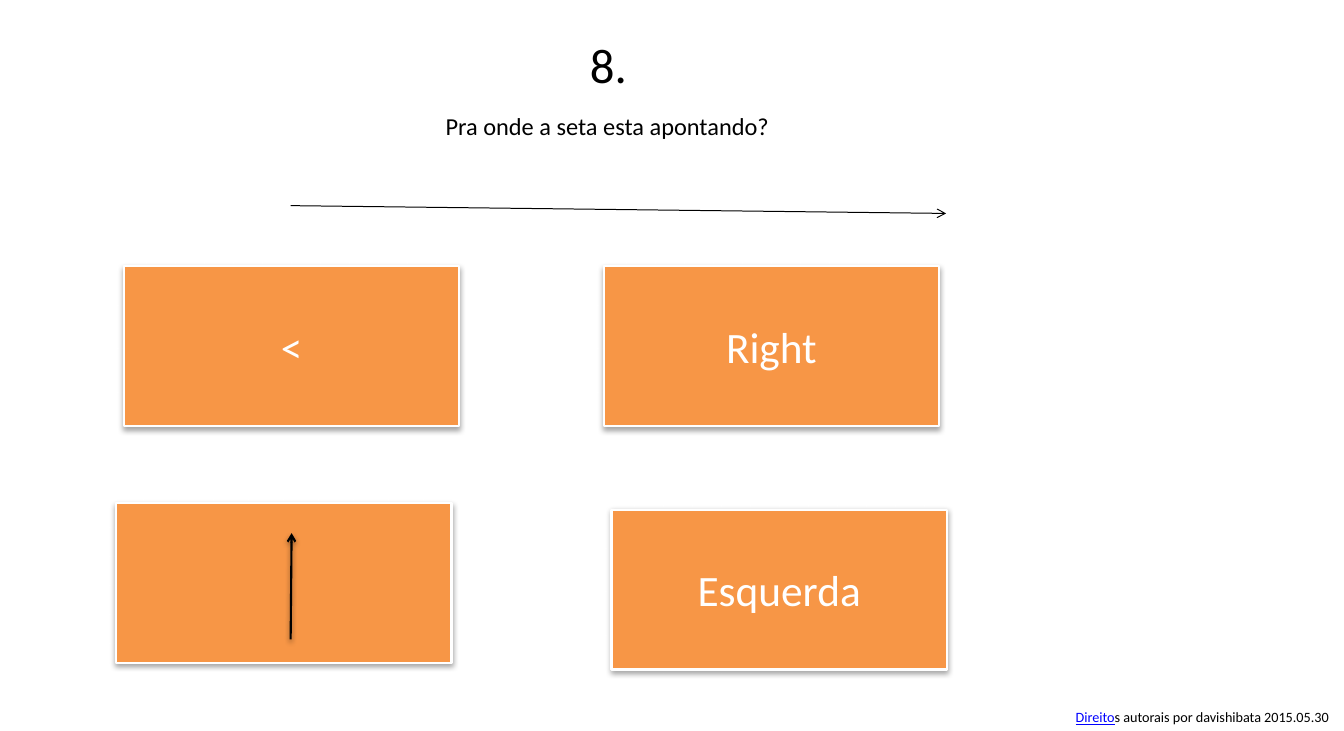
from lxml import etree
from pptx import Presentation
from pptx.dml.color import RGBColor
from pptx.enum.shapes import MSO_CONNECTOR as CONN, MSO_SHAPE as SHAPE
from pptx.enum.text import MSO_ANCHOR as ANCHOR, MSO_AUTO_SIZE as AUTO, PP_ALIGN as ALIGN
from pptx.oxml import parse_xml
from pptx.oxml.ns import nsdecls, qn
from pptx.util import Inches, Pt

FONT = "Calibri"
COLORS = {"text": "000000", "link": "0000FF", "card": "F79646", "white": "FFFFFF"}
CARD_W, CARD_H = 3.44, 1.64
CARD_LINE = 1.57

LABELS = [
    ((10.93, 7.22, 2.85, 0.28), 10.5,
     [("Direito", "link"), ("s autorais por davishibata 2015.05.30", "text")]),
    ((5.95, 0.31, 0.59, 0.71), 36, [("8.", "text")]),
    ((4.47, 1.09, 3.56, 0.4), 18, [("Pra onde a seta esta apontando?", "text")]),
]
CARDS = [
    (1.27, 2.73, "<"),
    (6.19, 2.73, "Right"),
    (1.19, 5.16, ""),
    (6.27, 5.23, "Esquerda"),
]
QUESTION_ARROW = (2.98, 2.11, 9.7, 2.19)
ANSWER_ARROW = (2.98, 6.56, 2.99, 5.47)


def rgb(name):
    return RGBColor.from_string(COLORS[name])


def add_effects(shape, opacity=0):
    shadow = ""
    if opacity:
        shadow = (
            f'<a:outerShdw blurRad="{Pt(4)}" dist="{Pt(2)}" dir="5400000" rotWithShape="0">'
            f'<a:srgbClr val="{COLORS["text"]}"><a:alpha val="{opacity * 1000}"/></a:srgbClr>'
            "</a:outerShdw>"
        )
    xml = f'<a:effectLst {nsdecls("a")}>{shadow}</a:effectLst>'
    shape._element.spPr.append(parse_xml(xml))


def add_run(p, text, size, color):
    r = p.add_run()
    r.text = text
    r.font.name = FONT
    r.font.size = Pt(size)
    r.font.color.rgb = rgb(color)
    r.font.underline = color == "link"


def add_label(s, box, size, runs):
    sp = s.shapes.add_textbox(*map(Inches, box))
    tf = sp.text_frame
    tf.word_wrap = False
    tf.auto_size = AUTO.SHAPE_TO_FIT_TEXT
    for text, color in runs:
        add_run(tf.paragraphs[0], text, size, color)


def add_card(s, x, y, text):
    sp = s.shapes.add_shape(SHAPE.RECTANGLE, *map(Inches, (x, y, CARD_W, CARD_H)))
    sp.fill.solid()
    sp.fill.fore_color.rgb = rgb("card")
    sp.line.color.rgb = rgb("white")
    sp.line.width = Pt(CARD_LINE)
    add_effects(sp, 35)
    if text:
        tf = sp.text_frame
        tf.vertical_anchor = ANCHOR.MIDDLE
        tf.paragraphs[0].alignment = ALIGN.CENTER
        add_run(tf.paragraphs[0], text, 32, "white")


def add_arrow(s, ends, width, opacity=0):
    line = s.shapes.add_connector(CONN.STRAIGHT, *map(Inches, ends))
    line.line.color.rgb = rgb("text")
    line.line.width = Pt(width)
    etree.SubElement(line.line._get_or_add_ln(), qn("a:tailEnd"), type="arrow")
    add_effects(line, opacity)


def main():
    prs = Presentation()
    prs.slide_width, prs.slide_height = Inches(13.78), Inches(7.5)
    s = prs.slides.add_slide(prs.slide_layouts[6])
    for label in LABELS:
        add_label(s, *label)
    add_arrow(s, QUESTION_ARROW, 0.75)
    for card in CARDS:
        add_card(s, *card)
    add_arrow(s, ANSWER_ARROW, CARD_LINE, 45)
    prs.save("out.pptx")


if __name__ == "__main__":
    main()
